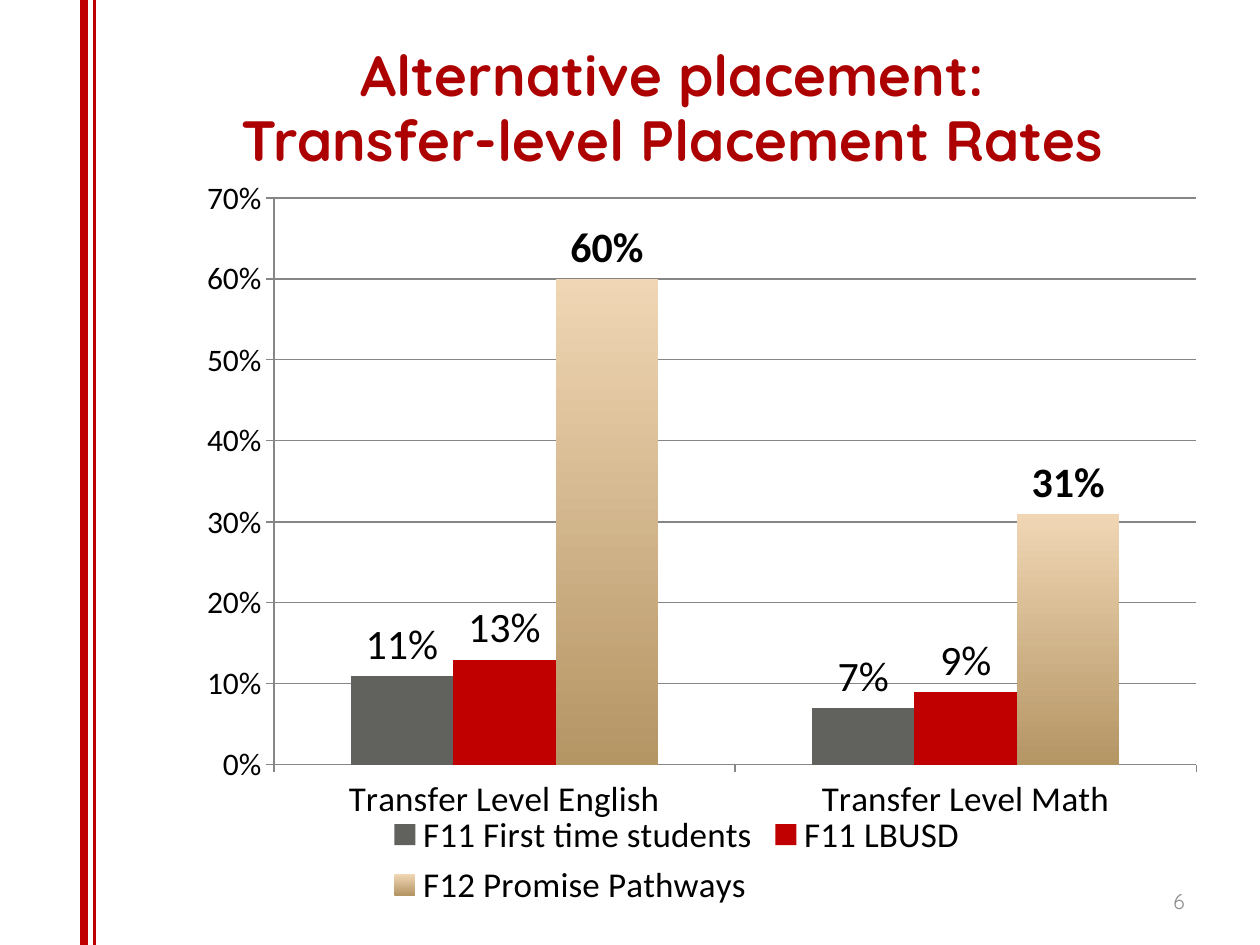
from typing import NamedTuple

from lxml import etree
from pptx import Presentation
from pptx import util as u
from pptx.chart.data import CategoryChartData
from pptx.dml.color import RGBColor
from pptx.enum import chart as ch, shapes, text
from pptx.oxml import parse_xml
from pptx.oxml.ns import nsdecls, qn

RED = "C00000"
GREY = "868686"


class Rule(NamedTuple):
    x: float
    width: float


class Group(NamedTuple):
    name: str
    rates: tuple[float, ...]
    fills: tuple[str, ...]  # one colour, or top and bottom of a gradient
    bold: bool = False


RULES = [Rule(0.75, 2.25), Rule(0.67, 4.5)]
GROUPS = [
    Group("F11 First time students", (0.11, 0.07), ("61625E",)),
    Group("F11 LBUSD", (0.13, 0.09), (RED,)),
    Group("F12 Promise Pathways", (0.6, 0.31), ("F0D6B4", "B49564"), True),
]


def rgb(code: str) -> RGBColor:
    return RGBColor.from_string(code)


def style(font, size: float, color: str = "000000", face: str = "Calibri",
          bold: bool = False) -> None:
    font.size, font.name, font.bold = u.Pt(size), face, bold
    font.color.rgb = rgb(color)


def draw_rule(slide, rule: Rule) -> None:
    x = u.Inches(rule.x)
    line = slide.shapes.add_connector(
        shapes.MSO_CONNECTOR.STRAIGHT, x, u.Inches(7.5), x, 0)
    line.line.color.rgb = rgb(RED)
    line.line.width = u.Pt(rule.width)
    etree.SubElement(line._element.spPr, qn("a:effectLst"))


def draw_group(series, group: Group) -> None:
    fill = series.format.fill
    if len(group.fills) == 1:
        fill.solid()
        fill.fore_color.rgb = rgb(group.fills[0])
    else:
        fill.gradient()
        fill.gradient_angle = 270
        for stop, color in zip(fill.gradient_stops, group.fills):
            stop.color.rgb = rgb(color)
    labels = series.data_labels
    labels.show_value = True
    labels.number_format, labels.number_format_is_linked = "0%", False
    labels.position = ch.XL_LABEL_POSITION.OUTSIDE_END
    style(labels.font, 24, bold=group.bold)


def place_plot(chart, x: float, y: float, w: float, h: float) -> None:
    area = chart._chartSpace.chart.plotArea
    for old in area.findall(qn("c:layout")):
        area.remove(old)
    sizes = "".join(f'<c:{tag} val="{val}"/>' for tag, val in
                    zip("xywh", (x, y, w, h)))
    area.insert(0, parse_xml(
        f'<c:layout {nsdecls("c")}><c:manualLayout><c:layoutTarget val="inner"/>'
        f'<c:xMode val="edge"/><c:yMode val="edge"/>{sizes}'
        '</c:manualLayout></c:layout>'))


def draw_chart(slide, groups: list[Group]) -> None:
    data = CategoryChartData(number_format="0%")
    data.categories = ["Transfer Level English", "Transfer Level Math"]
    for group in groups:
        data.add_series(group.name, group.rates)
    chart = slide.shapes.add_chart(
        ch.XL_CHART_TYPE.COLUMN_CLUSTERED, u.Inches(1.25), u.Inches(1.42),
        u.Inches(8.25), u.Inches(5.83), data).chart
    style(chart.font, 14)
    chart.has_title = False
    place_plot(chart, 0.112, 0.022, 0.888, 0.775)

    plot = chart.plots[0]
    plot.gap_width, plot.overlap = 150, 0
    plot.vary_by_categories = False
    for series, group in zip(plot.series, groups):
        draw_group(series, group)

    # Axes and gridlines
    rates = chart.value_axis
    rates.minimum_scale, rates.maximum_scale, rates.major_unit = 0, 0.7, 0.1
    rates.tick_labels.number_format = "0%"
    rates.tick_labels.number_format_is_linked = False
    rates.has_major_gridlines = True
    rates.major_gridlines.format.line.color.rgb = rgb(GREY)
    for axis, size in ((chart.category_axis, 20), (rates, 18)):
        axis.major_tick_mark = ch.XL_TICK_MARK.OUTSIDE
        axis.format.line.color.rgb = rgb(GREY)
        style(axis.tick_labels.font, size)

    # Legend
    chart.has_legend = True
    chart.legend.position = ch.XL_LEGEND_POSITION.BOTTOM
    chart.legend.include_in_layout = False
    style(chart.legend.font, 20)


def draw_title(slide) -> None:
    title = slide.shapes.title
    title.left, title.top = u.Inches(1.17), u.Inches(0.33)
    title.width, title.height = u.Inches(8.33), u.Inches(1.08)
    frame = title.text_frame
    frame.auto_size = text.MSO_AUTO_SIZE.NONE
    frame.vertical_anchor = text.MSO_ANCHOR.MIDDLE
    para = frame.paragraphs[0]
    para.text = "Alternative placement:\vTransfer-level Placement Rates"
    para.alignment = text.PP_ALIGN.CENTER
    para.line_spacing = 0.95
    style(para.font, 32.4, "AD0101", "Quicksand", True)


def draw_number(slide, number: int) -> None:
    box = slide.shapes.add_textbox(
        u.Inches(7.17), u.Inches(6.95), u.Inches(2.33), u.Inches(0.4))
    frame = box.text_frame
    frame.word_wrap = True
    frame.vertical_anchor = text.MSO_ANCHOR.MIDDLE
    para = frame.paragraphs[0]
    para.text = str(number)
    para.alignment = text.PP_ALIGN.RIGHT
    style(para.font, 12, "8C8C8C", "Quicksand")


def main() -> None:
    deck = Presentation()
    deck.slide_width, deck.slide_height = u.Inches(10), u.Inches(7.5)
    slide = deck.slides.add_slide(deck.slide_layouts[5])
    for rule in RULES:
        draw_rule(slide, rule)
    draw_chart(slide, GROUPS)
    draw_title(slide)
    draw_number(slide, 6)
    deck.save("out.pptx")


if __name__ == "__main__":
    main()
